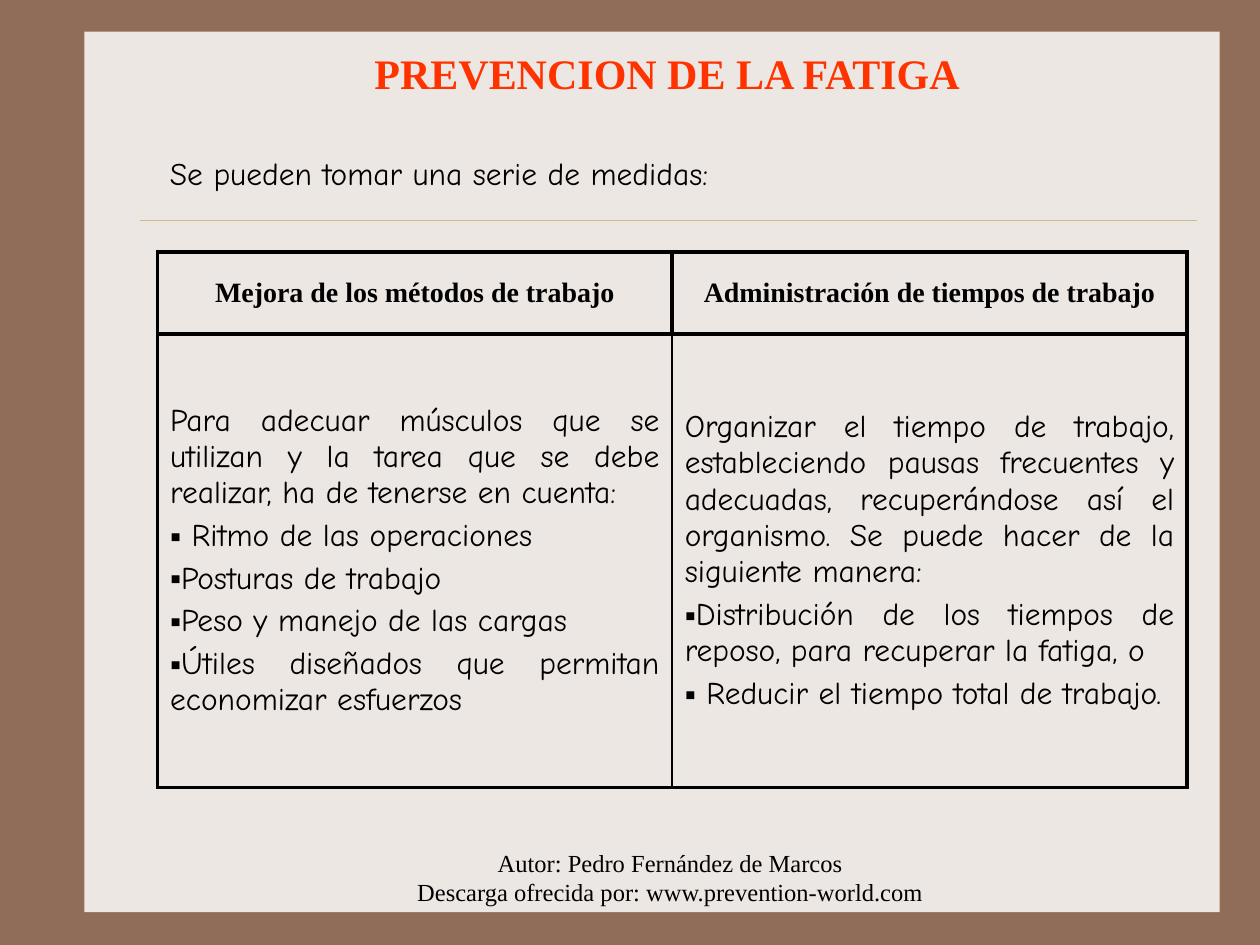
from dataclasses import dataclass

from lxml.etree import SubElement
from pptx import Presentation
from pptx.dml.color import RGBColor
from pptx.enum.shapes import MSO_CONNECTOR, MSO_SHAPE
from pptx.enum.text import MSO_ANCHOR as Anchor, PP_ALIGN as Align
from pptx.oxml import parse_xml
from pptx.oxml.ns import nsdecls, qn
from pptx.util import Inches, Pt

COLORS = {
    "frame": "906D58",
    "paper": "EDE7E3",
    "rule": "CBBD83",
    "title": "FF3300",
    "ink": "000000",
}
SERIF = "Times New Roman"
HAND = "Comic Neue"
THICK, THIN = 2.25, 1


@dataclass(frozen=True)
class Style:
    font: str
    size: int
    align: Align
    color: str = "ink"
    bold: bool = False
    space: float = 0


@dataclass(frozen=True)
class Measure:
    heading: str
    intro: str
    points: tuple[str, ...]


TITLE = Style(SERIF, 24, Align.CENTER, "title", True)
LEAD = Style(HAND, 18, Align.LEFT)
CREDIT = Style(SERIF, 14, Align.CENTER)
HEADING = Style(SERIF, 16, Align.CENTER, bold=True)
BODY = Style(HAND, 18, Align.JUSTIFY, space=0.2)

MEASURES = (
    Measure(
        "Mejora de los métodos de trabajo",
        "Para adecuar músculos que se utilizan y la tarea que se debe realizar, "
        "ha de tenerse en cuenta:",
        (
            " Ritmo de las operaciones",
            "Posturas de trabajo",
            "Peso y manejo de las cargas",
            "Útiles diseñados que permitan economizar esfuerzos",
        ),
    ),
    Measure(
        "Administración de tiempos de trabajo",
        "Organizar el tiempo de trabajo, estableciendo pausas frecuentes y adecuadas, "
        "recuperándose así el organismo. Se puede hacer de la siguiente manera:",
        (
            "Distribución de los tiempos de reposo, para recuperar la fatiga, o",
            " Reducir el tiempo total de trabajo.",
        ),
    ),
)


def rgb(name: str) -> RGBColor:
    return RGBColor.from_string(COLORS[name])


def add_bullet(paragraph) -> None:
    properties = paragraph._p.get_or_add_pPr()
    color = SubElement(properties, qn("a:buClr"))
    SubElement(color, qn("a:srgbClr"), val=COLORS["ink"])
    SubElement(properties, qn("a:buFont"), typeface="Arial")
    SubElement(properties, qn("a:buChar"), char="▪")


def write(frame, lines: tuple[str, ...], style: Style, bulleted_from: int = 99) -> None:
    frame.word_wrap = True
    frame.text = "\n".join(lines)
    for index, paragraph in enumerate(frame.paragraphs):
        paragraph.alignment = style.align
        if index:
            paragraph.space_before = Pt(style.size * style.space)
        if index >= bulleted_from:
            add_bullet(paragraph)
        for run in paragraph.runs:
            run.font.name = style.font
            run.font.size = Pt(style.size)
            run.font.bold = style.bold
            run.font.color.rgb = rgb(style.color)


def add_text(slide, left: float, top: float, width: float, height: float,
             lines: tuple[str, ...], style: Style) -> None:
    box = slide.shapes.add_textbox(
        Inches(left), Inches(top), Inches(width), Inches(height))
    write(box.text_frame, lines, style)


def format_cell(cell, left: float, right: float) -> None:
    cell.vertical_anchor = Anchor.MIDDLE
    cell.fill.background()
    properties = cell._tc.get_or_add_tcPr()
    edges = (("L", left), ("R", right), ("T", THICK), ("B", THICK))
    for index, (side, width) in enumerate(edges):
        properties.insert(index, parse_xml(
            f'<a:ln{side} {nsdecls("a")} w="{Pt(width)}"><a:solidFill>'
            f'<a:srgbClr val="{COLORS["ink"]}"/></a:solidFill></a:ln{side}>'))


def add_backdrop(slide) -> None:
    background = slide.background.fill
    background.solid()
    background.fore_color.rgb = rgb("frame")

    paper = slide.shapes.add_shape(
        MSO_SHAPE.RECTANGLE, Inches(0.67), Inches(0.25), Inches(9.01), Inches(6.99))
    paper.shadow.inherit = False
    paper.fill.solid()
    paper.fill.fore_color.rgb = rgb("paper")
    paper.line.fill.background()

    rule = slide.shapes.add_connector(
        MSO_CONNECTOR.STRAIGHT, Inches(1.11), Inches(1.75), Inches(9.5), Inches(1.75))
    rule.line.color.rgb = rgb("rule")
    rule.line.width = Pt(0.25)
    SubElement(rule._element.spPr, qn("a:effectLst"))


def add_title(slide, text: str) -> None:
    title = slide.shapes.title
    title.left, title.top = Inches(0.92), Inches(0.33)
    title.width, title.height = Inches(8.75), Inches(0.5)
    title.text_frame.vertical_anchor = Anchor.TOP
    write(title.text_frame, (text,), TITLE)
    slide.shapes._spTree.append(title._element)


def add_measures(slide) -> None:
    table = slide.shapes.add_table(
        2, len(MEASURES), Inches(1.25), Inches(2), Inches(8.17), Inches(4.25)).table
    table.first_row = table.horz_banding = False
    table.rows[0].height, table.rows[1].height = Inches(0.65), Inches(3.6)
    last = len(MEASURES) - 1
    for column, measure in enumerate(MEASURES):
        heading, body = table.cell(0, column), table.cell(1, column)
        write(heading.text_frame, (measure.heading,), HEADING)
        write(body.text_frame, (measure.intro, *measure.points), BODY, bulleted_from=1)
        format_cell(heading, THICK, THICK)
        format_cell(body, THIN if column else THICK, THIN if column < last else THICK)


def main() -> None:
    deck = Presentation()
    deck.slide_width, deck.slide_height = Inches(10), Inches(7.5)
    slide = deck.slides.add_slide(deck.slide_layouts[5])
    add_backdrop(slide)
    add_text(slide, 2.64, 6.68, 5.36, 0.5,
             ("Autor: Pedro Fernández de Marcos",
              "Descarga ofrecida por: www.prevention-world.com"), CREDIT)
    add_title(slide, "PREVENCION DE LA FATIGA")
    add_text(slide, 1.25, 1.17, 6.83, 0.4,
             ("Se pueden tomar una serie de medidas:",), LEAD)
    add_measures(slide)
    deck.save("out.pptx")


if __name__ == "__main__":
    main()
